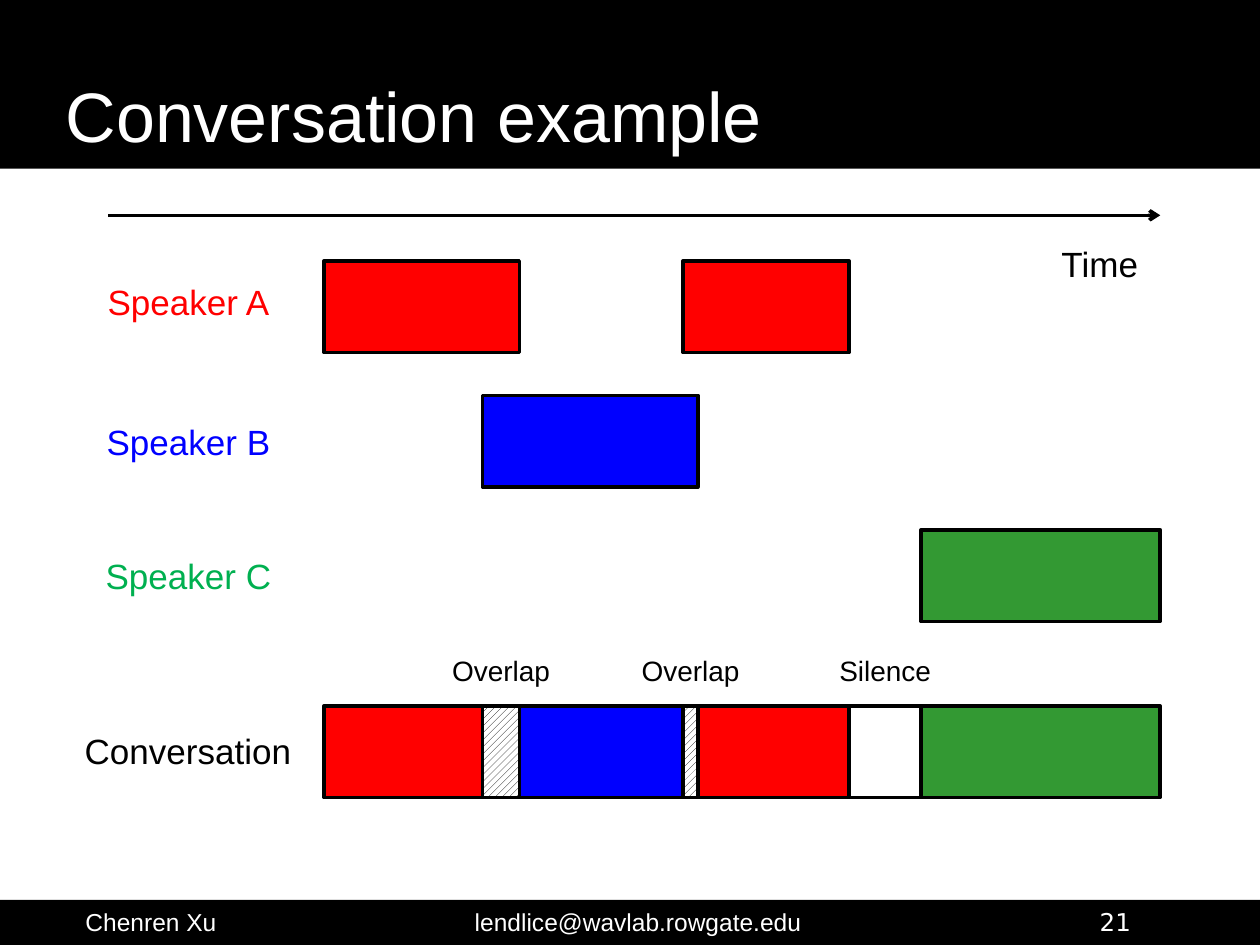
from lxml import etree
from pptx import Presentation
from pptx.dml.color import RGBColor
from pptx.enum.dml import MSO_PATTERN
from pptx.enum.shapes import MSO_CONNECTOR, MSO_SHAPE
from pptx.enum.text import MSO_ANCHOR, MSO_AUTO_SIZE, PP_ALIGN
from pptx.oxml.ns import qn
from pptx.util import Cm, Pt

RECTANGLE = MSO_SHAPE.RECTANGLE
STRAIGHT = MSO_CONNECTOR.STRAIGHT
HATCH = MSO_PATTERN.WIDE_UPWARD_DIAGONAL
BOTTOM = MSO_ANCHOR.BOTTOM
GROW = MSO_AUTO_SIZE.SHAPE_TO_FIT_TEXT
LEFT, CENTER = PP_ALIGN.LEFT, PP_ALIGN.CENTER

COLORS = {
    "black": "000000",
    "white": "FFFFFF",
    "red": "FF0000",
    "blue": "0000FF",
    "green": "339933",
    "bright green": "00B050",
}

TITLE_ONLY = 5
PAGE_WIDTH, PAGE_HEIGHT = 25.4, 19.05
BLOCK_HEIGHT = 1.85
LANE_STEP = 2.71
CONVERSATION_TOP = 8.97

SPEAKERS = [
    ("Speaker A", "red", 0.28),
    ("Speaker B", "blue", 0.38),
    ("Speaker C", "bright green", 0.38),
]
TURNS = [
    (0, 0, 3.94, "red"),
    (1, 3.2, 7.54, "blue"),
    (0, 7.24, 10.59, "red"),
    (2, 12.04, 16.86, "green"),
]


def color(name):
    return RGBColor.from_string(COLORS[name])


def style_text(frame, text, size, shade, align, font="Arial"):
    frame.text = text
    para = frame.paragraphs[0]
    para.alignment = align
    para.font.size = Pt(size)
    para.font.name = font
    para.font.color.rgb = color(shade)


def add_label(page, box, text, size, shade, align=CENTER, font="Arial", grow=True):
    label = page.shapes.add_textbox(*map(Cm, box))
    label.text_frame.word_wrap = True
    if grow:
        label.text_frame.auto_size = GROW
    style_text(label.text_frame, text, size, shade, align, font)


def add_band(page, box):
    band = page.shapes.add_shape(RECTANGLE, *map(Cm, box))
    band.shadow.inherit = False
    band.fill.solid()
    band.fill.fore_color.rgb = color("black")
    band.line.fill.background()


def add_block(page, left, top, width, shade, hatched=False):
    block = page.shapes.add_shape(
        RECTANGLE, Cm(left), Cm(top), Cm(width), Cm(BLOCK_HEIGHT))
    block.shadow.inherit = False
    if hatched:
        block.fill.patterned()
        block.fill.pattern = HATCH
        block.fill.fore_color.rgb = color("black")
        block.fill.back_color.rgb = color("white")
    else:
        block.fill.solid()
        block.fill.fore_color.rgb = color(shade)
    block.line.color.rgb = color("black")
    block.line.width = Pt(2)


def add_header(page, box):
    left, top, width, height = box
    add_band(page, box)
    title = page.shapes.title
    title.left, title.top = Cm(left + 1.07), Cm(top + 1.17)
    title.width, title.height = Cm(width - 2.18), Cm(height - 1.29)
    title.text_frame.vertical_anchor = BOTTOM
    title.text_frame.auto_size = MSO_AUTO_SIZE.NONE
    style_text(title.text_frame, "Conversation example", 40, "white", LEFT)
    page.shapes.element.append(title.element)


def add_footer(page, box):
    left, top, width, height = box
    add_band(page, box)
    notes = [
        (1.09, 3.91, "Chenren Xu", CENTER, "Arial"),
        (8.56, 8.61, "lendlice@wavlab.rowgate.edu", CENTER, "Arial"),
        (21.92, 2.44, "21", LEFT, "DejaVu Sans"),
    ]
    for offset, note_width, text, align, font in notes:
        add_label(page, (left + offset, top + 0.02, note_width, 0.75),
                  text, 14, "white", align, font, grow=False)


def add_time_axis(page, box):
    left, top, width, height = box
    axis = page.shapes.add_connector(
        STRAIGHT, Cm(left), Cm(top), Cm(left + width), Cm(top))
    axis.line.color.rgb = color("black")
    axis.line.width = Pt(2)
    etree.SubElement(axis.line._get_or_add_ln(), qn("a:tailEnd"), type="arrow")
    etree.SubElement(axis.element.spPr, qn("a:effectLst"))
    add_label(page, (left + width - 3.2, top + 0.43, 3.96, height - 0.43),
              "Time", 20, "black")


def add_lane_names(page, box):
    left, top, width, height = box
    for lane, (name, shade, drop) in enumerate(SPEAKERS):
        add_label(page, (left + 0.48, top + lane * LANE_STEP + drop, 4.04, 1.12),
                  name, 20, shade)
    add_label(page, (left, top + CONVERSATION_TOP + 0.36, width, 1.12),
              "Conversation", 20, "black")


def add_speaker_lanes(page, box):
    left, top, width, height = box
    for lane, start, end, shade in TURNS:
        add_block(page, left + start, top + lane * LANE_STEP, end - start, shade)


def add_conversation(page, box):
    left, top, width, height = box
    for lane, start, end, shade in TURNS:
        add_block(page, left + start, top, end - start, shade)
    for before, after in zip(TURNS, TURNS[1:]):
        first, last = sorted((before[2], after[1]))
        overlap = after[1] < before[2]
        add_block(page, left + first, top, last - first, "white", overlap)
        middle = left + (first + last) / 2
        add_label(page, (middle - 1.98, top - 1.17, 3.96, 0.94),
                  "Overlap" if overlap else "Silence", 16, "black")


def main():
    deck = Presentation()
    deck.slide_width, deck.slide_height = Cm(PAGE_WIDTH), Cm(PAGE_HEIGHT)
    page = deck.slides.add_slide(deck.slide_layouts[TITLE_ONLY])
    add_header(page, (0, 0, PAGE_WIDTH, 3.4))
    add_footer(page, (0, 18.14, PAGE_WIDTH, 0.91))
    add_time_axis(page, (2.18, 4.34, 21.21, 1.55))
    add_lane_names(page, (1.3, 5.26, 4.98, 10.82))
    add_speaker_lanes(page, (6.53, 5.26, 16.86, 7.27))
    add_conversation(page, (6.53, 5.26 + CONVERSATION_TOP, 16.86, BLOCK_HEIGHT))
    deck.save("out.pptx")


if __name__ == "__main__":
    main()
